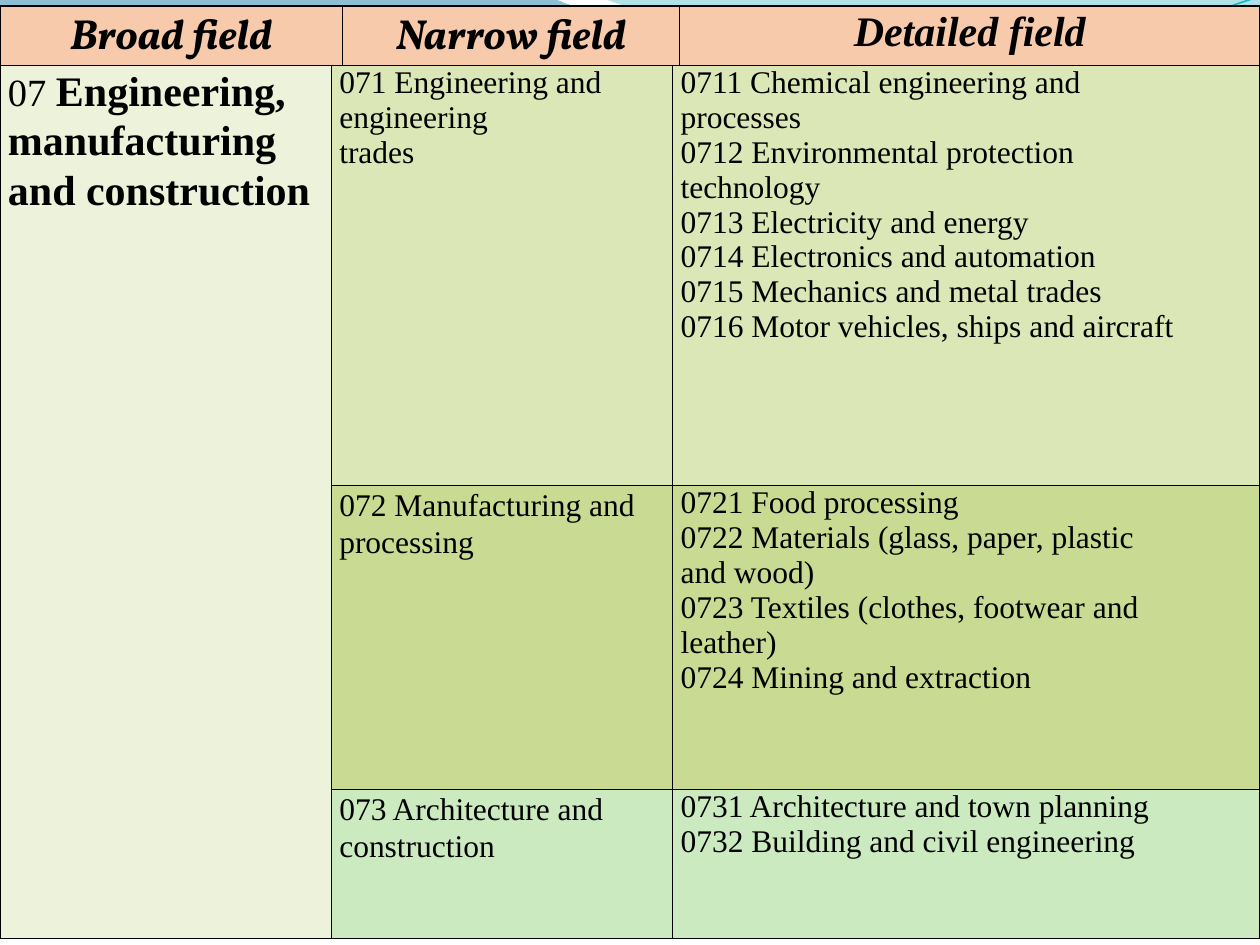
import dataclasses
import typing

import lxml.etree
import pptx
import pptx.dml.color
import pptx.enum.text
import pptx.oxml.ns
import pptx.util

Cm = pptx.util.Cm
Pt = pptx.util.Pt
qn = pptx.oxml.ns.qn
Point = tuple[float, float]


@dataclasses.dataclass(frozen=True)
class Theme:
    ink: str = "000000"
    header: str = "F7CAAC"
    broad: str = "EDF3DB"
    engineering: str = "DBE7B6"
    manufacturing: str = "C9DA92"
    construction: str = "CBEAC0"
    body_font: str = "Times New Roman"
    display_font: str = "Vollkorn"
    title_size: int = 24
    code_size: int = 22
    body_size: int = 18
    border_width: int = 1


THEME = Theme()
BODY = {"name": THEME.body_font, "size": Pt(THEME.body_size)}
CODE = BODY | {"size": Pt(THEME.code_size)}
BROAD = BODY | {"size": Pt(THEME.title_size), "bold": True}
HEADING = BROAD | {"italic": True}
DISPLAY = HEADING | {"name": THEME.display_font}
SPACED = {"line_spacing": 1.07, "space_after": Pt(8)}
CENTRED = SPACED | {"alignment": pptx.enum.text.PP_ALIGN.CENTER}


class Run(typing.NamedTuple):
    text: str
    font: dict[str, typing.Any] = BODY


class Cell(typing.NamedTuple):
    paragraphs: list[list[Run]]
    fill: str
    paragraph_format: dict[str, typing.Any] = {}
    margin: float = 0.16
    borders: str = "LRTB"


class Stop(typing.NamedTuple):
    position: float
    color: str
    opacity: int


@dataclasses.dataclass(frozen=True)
class Wave:
    start: Point
    segments: list[tuple[Point, ...]]
    stops: tuple[Stop, ...] = ()
    line_color: str = ""
    line_width: float = 0


WAVES = [
    Wave(
        (0, 0),
        [
            ((11.18, -0.03),),
            ((12.09, 0.43), (16.87, 1.6), (19.25, 1.6)),
            ((21.67, 1.6), (24.33, 0.66), (25.4, 0.23)),
            ((25.43, 0.91),),
            ((24.97, 1.12), (22.1, 1.93), (18.95, 1.91)),
            ((15.8, 1.91), (9.7, 0.71), (6.53, 0.86)),
            ((3.28, 0.91), (1.17, 2.11), (-0.03, 2.87)),
        ],
        stops=(Stop(0, "0074A1", 45), Stop(1, "00C6CF", 55)),
    ),
    Wave(
        (12.17, -0.03),
        [
            ((12.93, 0.28), (17.32, 1.57), (19.53, 1.65)),
            ((21.74, 1.75), (24.41, 0.81), (25.4, 0.53)),
            ((25.4, 0),),
        ],
        stops=(Stop(0, "00A1A9", 30), Stop(0.8, "008BBF", 45)),
    ),
    Wave(
        (0, 2.82),
        [
            ((1.22, 2.36), (4.01, 1.45), (7.04, 1.32)),
            ((10.03, 1.19), (15.06, 2.26), (18.11, 2.03)),
            ((21.16, 1.8), (23.83, 0.38), (25.35, -0.05)),
        ],
        line_color="0AB8BF",
        line_width=0.85,
    ),
    Wave(
        (0, 2.64),
        [
            ((1.19, 2.44), (4.17, 1.55), (7.19, 1.42)),
            ((10.24, 1.3), (15.16, 2.13), (18.21, 1.91)),
            ((21.23, 1.7), (23.9, 0.53), (25.4, 0.15)),
        ],
        line_color="0F6FC6",
        line_width=0.75,
    ),
]


def rgb(value: str) -> pptx.dml.color.RGBColor:
    return pptx.dml.color.RGBColor.from_string(value)


def apply_format(target: typing.Any, values: dict[str, typing.Any]) -> None:
    for name, value in values.items():
        setattr(target, name, value)


def bend_segments(shape: typing.Any, segments: list[tuple[Point, ...]]) -> None:
    lines = iter(list(shape._element.iter(qn("a:lnTo"))))
    for segment in segments:
        parts = [next(lines) for _ in segment]
        if len(parts) == 1:
            continue
        curve = lxml.etree.Element(qn("a:cubicBezTo"))
        parts[0].addprevious(curve)
        for part in parts:
            curve.append(part[0])
            part.getparent().remove(part)


def draw_wave(slide: typing.Any, wave: Wave) -> None:
    builder = slide.shapes.build_freeform(Cm(wave.start[0]), Cm(wave.start[1]))
    points = [(Cm(x), Cm(y)) for segment in wave.segments for x, y in segment]
    builder.add_line_segments(points, close=bool(wave.stops))
    shape = builder.convert_to_shape()
    bend_segments(shape, wave.segments)
    shape.shadow.inherit = False
    if not wave.stops:
        shape.fill.background()
        shape.line.color.rgb = rgb(wave.line_color)
        shape.line.width = Pt(wave.line_width)
        return
    shape.line.fill.background()
    shape.fill.gradient()
    shape.fill.gradient_angle = 270
    for target, stop in zip(shape.fill.gradient_stops, wave.stops):
        target.color.rgb = rgb(stop.color)
        target.position = stop.position
    for color, stop in zip(shape._element.spPr.iter(qn("a:srgbClr")), wave.stops):
        lxml.etree.SubElement(color, qn("a:alpha"), val=str(stop.opacity * 1000))


def draw_borders(target: typing.Any, sides: str) -> None:
    properties = target._tc.get_or_add_tcPr()
    for index, side in enumerate("LRTB"):
        visible = side in sides
        line = lxml.etree.Element(qn(f"a:ln{side}"), w=str(Pt(THEME.border_width) if visible else 0))
        fill = lxml.etree.SubElement(line, qn("a:solidFill" if visible else "a:noFill"))
        if visible:
            lxml.etree.SubElement(fill, qn("a:srgbClr"), val=THEME.ink)
        properties.insert(index, line)


def fill_cell(target: typing.Any, cell: Cell) -> None:
    margin = Cm(cell.margin)
    apply_format(target, {"margin_left": margin, "margin_right": margin, "margin_top": 0, "margin_bottom": 0})
    target.fill.solid()
    target.fill.fore_color.rgb = rgb(cell.fill)
    draw_borders(target, cell.borders)
    for index, runs in enumerate(cell.paragraphs):
        frame = target.text_frame
        paragraph = frame.add_paragraph() if index else frame.paragraphs[0]
        apply_format(paragraph, cell.paragraph_format)
        for item in runs:
            run = paragraph.add_run()
            run.text = item.text
            apply_format(run.font, item.font)
            run.font.color.rgb = rgb(THEME.ink)


def draw_table(slide: typing.Any, top: float, widths: list[float], heights: list[float], rows: list[list[Cell]]) -> None:
    frame = slide.shapes.add_table(len(rows), len(widths), 0, Cm(top), Cm(sum(widths)), Cm(sum(heights)))
    table = frame.table
    apply_format(table, {"first_row": False, "horz_banding": False})
    for column, width in zip(table.columns, widths):
        column.width = Cm(width)
    for row, height, cells in zip(table.rows, heights, rows):
        row.height = Cm(height)
        for target, cell in zip(row.cells, cells):
            fill_cell(target, cell)


def heading(text: str, font: dict[str, typing.Any]) -> Cell:
    return Cell([[Run(text, font)]], THEME.header, CENTRED, 0.18)


def listing(fill: str, *lines: str) -> Cell:
    return Cell([[Run(line)] for line in lines], fill)


def narrow(fill: str, text: str) -> Cell:
    return Cell([[Run(text)]], fill, SPACED)


def main() -> None:
    presentation = pptx.Presentation()
    apply_format(presentation, {"slide_width": Cm(25.4), "slide_height": Cm(19.05)})
    slide = presentation.slides.add_slide(presentation.slide_layouts[6])
    for wave in WAVES:
        draw_wave(slide, wave)
    headings = [heading("Broad field", DISPLAY), heading("Narrow field", DISPLAY), heading("Detailed field", HEADING)]
    draw_table(slide, 0.12, [6.9, 6.8, 11.7], [1.1], [headings])
    title = [Run("07 ", CODE), Run("Engineering, manufacturing and construction", BROAD)]
    broad = Cell([title], THEME.broad, SPACED, borders="LRT")
    first, second, third = THEME.engineering, THEME.manufacturing, THEME.construction
    rows = [
        [broad, listing(first, "071 Engineering and engineering", "trades"),
         listing(first, "0711 Chemical engineering and", "processes", "0712 Environmental protection", "technology",
                 "0713 Electricity and energy", "0714 Electronics and automation", "0715 Mechanics and metal trades",
                 "0716 Motor vehicles, ships and aircraft")],
        [Cell([], THEME.broad, borders="LR"), narrow(second, "072 Manufacturing and processing"),
         listing(second, "0721 Food processing", "0722 Materials (glass, paper, plastic", "and wood)",
                 "0723 Textiles (clothes, footwear and", "leather)", "0724 Mining and extraction")],
        [Cell([], THEME.broad, borders="LRB"), narrow(third, "073 Architecture and construction"),
         listing(third, "0731 Architecture and town planning", "0732 Building and civil engineering")],
    ]
    draw_table(slide, 1.32, [6.68, 6.88, 11.84], [8.47, 6.13, 3], rows)
    presentation.save("out.pptx")


if __name__ == "__main__":
    main()
